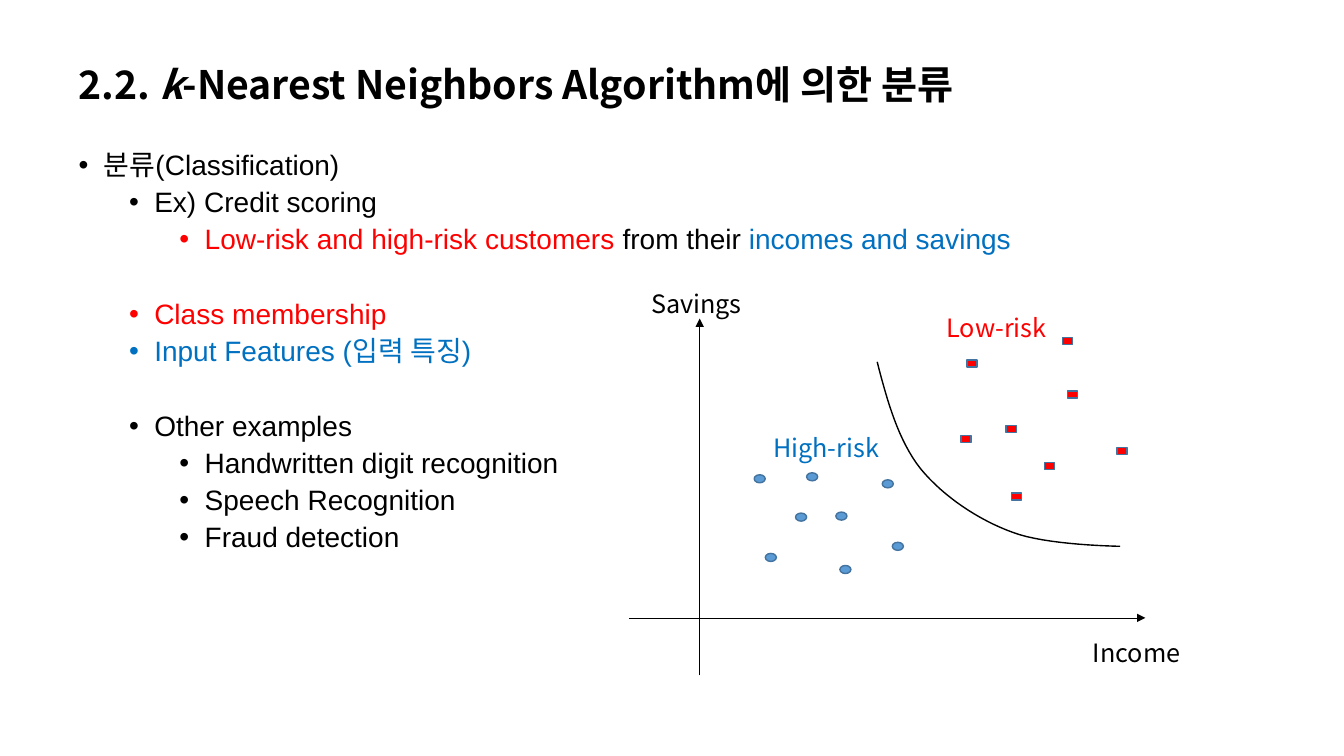
import dataclasses

import lxml.etree
import pptx
import pptx.dml.color
import pptx.enum.shapes
import pptx.enum.text
import pptx.oxml.ns
import pptx.util

Inches = pptx.util.Inches


@dataclasses.dataclass(frozen=True)
class Theme:
    """Colours, fonts and type sizes of the slide."""
    black: str = "000000"
    red: str = "FF0000"
    blue: str = "0070C0"
    dot: str = "5B9BD5"
    outline: str = "43739E"
    body_font: str = "Arial"
    heading_font: str = "Noto Sans CJK KR"
    title_size: int = 28
    body_size: int = 20
    label_size: int = 18
    line_spacing: float = 0.9


THEME = Theme()
BLACK, RED, BLUE = THEME.black, THEME.red, THEME.blue

BULLETS = [
    (0, False, [("분류(Classification)", BLACK)]),
    (1, False, [("Ex) Credit scoring", BLACK)]),
    (2, False, [("Low-risk and high-risk customers", RED), (" from their ", BLACK),
                ("incomes and savings", BLUE)]),
    (1, True, [("Class membership", RED)]),
    (1, False, [("Input Features (입력 특징)", BLUE)]),
    (1, True, [("Other examples", BLACK)]),
    (2, False, [("Handwritten digit recognition", BLACK)]),
    (2, False, [("Speech Recognition", BLACK)]),
    (2, False, [("Fraud detection", BLACK)]),
]
HIGH_RISK_POINTS = [(8, 4.69), (8.33, 5.61), (7.48, 4.71), (8.29, 5.08),
                    (7.89, 5.09), (8.85, 5.38), (8.75, 4.76), (7.59, 5.49)]
LOW_RISK_POINTS = [(9.59, 3.57), (9.98, 4.22), (10.36, 4.59), (10.59, 3.88),
                   (11.08, 4.44), (10.03, 4.89), (9.53, 4.32), (10.54, 3.35)]
BOUNDARY = [(8.7, 3.59), (8.8, 3.98), (8.91, 4.37), (9.13, 4.65), (9.36, 4.93),
            (9.71, 5.16), (10.04, 5.28), (10.37, 5.41), (11.11, 5.42), (11.11, 5.42)]
AXES = [((6.24, 6.13), (11.36, 6.13)), ((6.94, 6.7), (6.94, 3.16))]
LABELS = [("Income", 10.74, 6.27, 1.2, BLACK), ("Savings", 6.36, 2.81, 1.33, BLACK),
          ("Low-risk", 9.29, 3.05, 1.25, RED), ("High-risk", 7.57, 4.24, 1.25, BLUE)]


def rgb(color):
    """Return the colour object of a hex string."""
    return pptx.dml.color.RGBColor.from_string(color)


def add_xml(parent, tag, **attributes):
    """Append a drawing element to a parent element."""
    return lxml.etree.SubElement(parent, pptx.oxml.ns.qn(tag), attributes)


def add_text(para, text, size, color=BLACK, font=THEME.heading_font, bold=False, italic=False):
    """Add one formatted span to a paragraph."""
    span = para.add_run()
    span.text = text
    span.font.size = pptx.util.Pt(size)
    span.font.name = font
    span.font.bold = bold
    span.font.italic = italic
    span.font.color.rgb = rgb(color)
    add_xml(span.font._element, "a:ea", typeface=THEME.heading_font)


def cubic_points(controls, steps=16):
    """Sample a chain of cubic curves that share their end points."""
    points = [controls[0]]
    for first in range(0, len(controls) - 1, 3):
        a, b, c, d = controls[first:first + 4]
        for step in range(1, steps + 1):
            t = step / steps
            u = 1 - t
            points.append(tuple(u**3 * p + 3 * u * u * t * q + 3 * u * t * t * r + t**3 * s
                                for p, q, r, s in zip(a, b, c, d)))
    return points


class SlideBuilder:
    """Draws each kind of element on the current slide."""

    def __init__(self, page, theme):
        """Keep the page and its theme."""
        self.page = page
        self.theme = theme

    def place(self, box, left, top, width, height):
        """Move and size a box given in inches."""
        box.left, box.top = Inches(left), Inches(top)
        box.width, box.height = Inches(width), Inches(height)
        box.text_frame.word_wrap = True
        box.text_frame.auto_size = pptx.enum.text.MSO_AUTO_SIZE.NONE

    def title(self, parts):
        """Fill the title from (text, italic) pairs."""
        box = self.page.shapes.title
        self.place(box, 0.68, 0.55, 11.5, 0.62)
        box.text_frame.vertical_anchor = pptx.enum.text.MSO_ANCHOR.MIDDLE
        para = box.text_frame.paragraphs[0]
        para.alignment = pptx.enum.text.PP_ALIGN.LEFT
        para.line_spacing = self.theme.line_spacing
        for text, italic in parts:
            add_text(para, text, self.theme.title_size, bold=True, italic=italic)

    def bullets(self, items):
        """Fill the body with a list of (level, starts a group, spans)."""
        box = self.page.placeholders[1]
        self.place(box, 0.68, 1.45, 9.83, 5.53)
        for index, (level, new_group, spans) in enumerate(items):
            frame = box.text_frame
            para = frame.add_paragraph() if index else frame.paragraphs[0]
            para.level = level
            para.alignment = pptx.enum.text.PP_ALIGN.LEFT
            para.line_spacing = self.theme.line_spacing
            para.space_before = pptx.util.Pt(31.7 if new_group else 5 if level else 10)
            properties = para._p.get_or_add_pPr()
            properties.set("marL", str(Inches(0.25 + 0.5 * level)))
            properties.set("indent", str(Inches(-0.25)))
            add_xml(properties, "a:buFont", typeface=self.theme.body_font)
            add_xml(properties, "a:buChar", char="•")
            for text, color in spans:
                add_text(para, text, self.theme.body_size, color, self.theme.body_font)

    def label(self, text, left, top, width, color):
        """Add a chart label."""
        box = self.page.shapes.add_textbox(0, 0, 0, 0)
        self.place(box, left, top, width, 0.3)
        box.text_frame.auto_size = pptx.enum.text.MSO_AUTO_SIZE.SHAPE_TO_FIT_TEXT
        add_text(box.text_frame.paragraphs[0], text, self.theme.label_size, color)

    def markers(self, kind, points, width, height, fill):
        """Add one marker for each data point."""
        for left, top in points:
            marker = self.page.shapes.add_shape(
                kind, Inches(left), Inches(top), Inches(width), Inches(height))
            marker.shadow.inherit = False
            marker.fill.solid()
            marker.fill.fore_color.rgb = rgb(fill)
            self.stroke(marker, self.theme.outline, 1)

    def stroke(self, shape, color, width):
        """Set the line of a shape."""
        shape.line.color.rgb = rgb(color)
        shape.line.width = pptx.util.Pt(width)

    def axis(self, start, end):
        """Add an axis with an arrowhead at its end."""
        axis = self.page.shapes.add_connector(
            pptx.enum.shapes.MSO_CONNECTOR.STRAIGHT, *map(Inches, start + end))
        self.stroke(axis, self.theme.black, 0.5)
        add_xml(axis.line._get_or_add_ln(), "a:tailEnd", type="triangle")
        add_xml(axis._element.spPr, "a:effectLst")

    def curve(self, controls):
        """Add an open smooth curve."""
        points = [(Inches(x), Inches(y)) for x, y in cubic_points(controls)]
        builder = self.page.shapes.build_freeform(*points[0])
        builder.add_line_segments(points[1:], close=False)
        curve = builder.convert_to_shape()
        curve.shadow.inherit = False
        curve.fill.background()
        self.stroke(curve, self.theme.black, 1)


def main():
    """Build and save the slide."""
    deck = pptx.Presentation()
    deck.slide_width, deck.slide_height = Inches(13.33), Inches(7.5)
    slide = SlideBuilder(deck.slides.add_slide(deck.slide_layouts[1]), THEME)
    slide.title([("2.2. ", False), ("k", True),
                 ("-Nearest Neighbors Algorithm에 의한 분류", False)])
    slide.bullets(BULLETS)
    shapes = pptx.enum.shapes.MSO_SHAPE
    slide.markers(shapes.OVAL, HIGH_RISK_POINTS, 0.11, 0.08, THEME.dot)
    slide.markers(shapes.RECTANGLE, LOW_RISK_POINTS, 0.1, 0.07, THEME.red)
    for start, end in AXES:
        slide.axis(start, end)
    slide.curve(BOUNDARY)
    for label in LABELS:
        slide.label(*label)
    deck.save("out.pptx")


if __name__ == "__main__":
    main()
